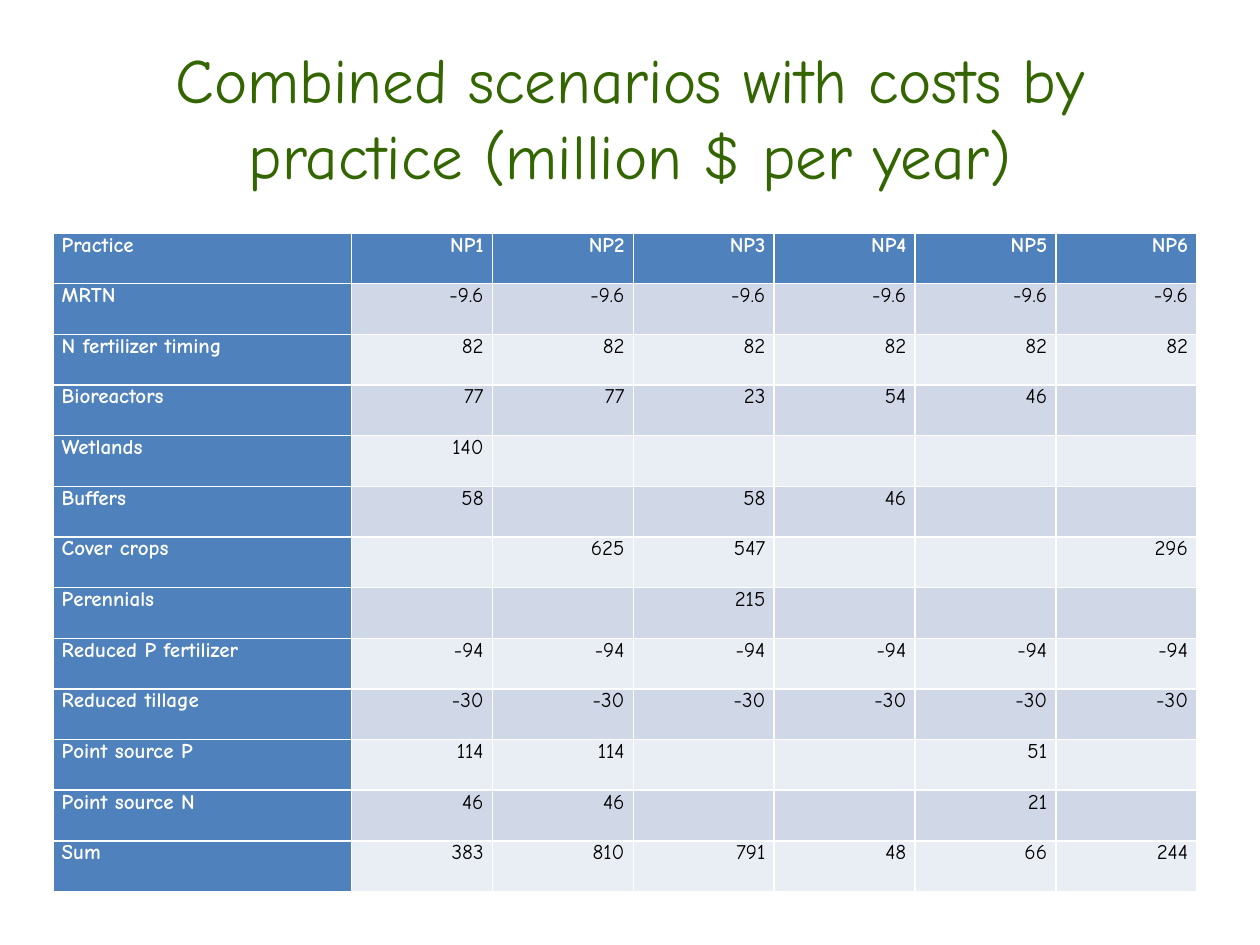
from pptx import Presentation
from pptx.dml.color import RGBColor
from pptx.enum.text import MSO_ANCHOR, PP_ALIGN as Align
from pptx.util import Inches, Pt

FONT = "Comic Neue"
GREEN = RGBColor(0x33, 0x66, 0x00)
BLUE = RGBColor(0x4F, 0x81, 0xBD)
DARK_BAND = RGBColor(0xD0, 0xD8, 0xE8)
LIGHT_BAND = RGBColor(0xE9, 0xED, 0xF4)
WHITE = RGBColor(0xFF, 0xFF, 0xFF)
BLACK = RGBColor(0x00, 0x00, 0x00)

TITLE = "Combined scenarios with costs by practice (million $ per year)"
COSTS = [
    ["Practice", "NP1", "NP2", "NP3", "NP4", "NP5", "NP6"],
    ["MRTN"] + ["-9.6"] * 6,
    ["N fertilizer timing"] + ["82"] * 6,
    ["Bioreactors", "77", "77", "23", "54", "46", ""],
    ["Wetlands", "140", "", "", "", "", ""],
    ["Buffers", "58", "", "58", "46", "", ""],
    ["Cover crops", "", "625", "547", "", "", "296"],
    ["Perennials", "", "", "215", "", "", ""],
    ["Reduced P fertilizer"] + ["-94"] * 6,
    ["Reduced tillage"] + ["-30"] * 6,
    ["Point source P", "114", "114", "", "", "51", ""],
    ["Point source N", "46", "46", "", "", "21", ""],
    ["Sum", "383", "810", "791", "48", "66", "244"],
]
TABLE_LEFT, TABLE_TOP = 0.42, 1.85
TABLE_WIDTH, TABLE_HEIGHT = 9.08, 5.23
PRACTICE_WIDTH = 2.37


def apply_format(target, values):
    for name, value in values.items():
        setattr(target, name, value)


def add_text(paragraph, text, size, color, bold=False):
    run = paragraph.add_run()
    run.text = text
    apply_format(run.font, {"name": FONT, "size": Pt(size), "bold": bold})
    run.font.color.rgb = color


def set_title(slide):
    title = slide.shapes.title
    apply_format(title, {"left": Inches(0.5), "top": Inches(0.3),
                         "width": Inches(9), "height": Inches(1.25)})
    title.text_frame.vertical_anchor = MSO_ANCHOR.MIDDLE
    paragraph = title.text_frame.paragraphs[0]
    paragraph.alignment = Align.CENTER
    add_text(paragraph, TITLE, 36, GREEN)


def paragraph_spacing(row):
    """Return the points before and after the text of a table row."""
    before = {0: 6, 1: 12}.get(row, 0)
    after = 0 if row in (0, len(COSTS) - 1) else 6
    return {"space_before": Pt(before), "space_after": Pt(after)}


def fill_cell(cell, text, row, column):
    heading = row == 0 or column == 0
    band = DARK_BAND if row % 2 else LIGHT_BAND
    cell.fill.solid()
    cell.fill.fore_color.rgb = BLUE if heading else band
    apply_format(cell, {"margin_left": Inches(0.07), "margin_right": Inches(0.07),
                        "margin_top": 0, "margin_bottom": 0})
    if text:
        paragraph = cell.text_frame.paragraphs[0]
        paragraph.alignment = Align.RIGHT if column else Align.LEFT
        apply_format(paragraph, paragraph_spacing(row))
        add_text(paragraph, text, 12, WHITE if heading else BLACK, heading)


def add_cost_table(slide):
    row_count, column_count = len(COSTS), len(COSTS[0])
    table = slide.shapes.add_table(
        row_count, column_count, Inches(TABLE_LEFT), Inches(TABLE_TOP),
        Inches(TABLE_WIDTH), Inches(TABLE_HEIGHT)).table
    table.first_col = True
    scenario_width = (TABLE_WIDTH - PRACTICE_WIDTH) / (column_count - 1)
    for index, column in enumerate(table.columns):
        column.width = Inches(scenario_width if index else PRACTICE_WIDTH)
    for row, texts in enumerate(COSTS):
        for column, text in enumerate(texts):
            fill_cell(table.cell(row, column), text, row, column)


def main():
    presentation = Presentation()
    presentation.slide_width = Inches(10)
    presentation.slide_height = Inches(7.5)
    slide = presentation.slides.add_slide(presentation.slide_layouts[5])
    set_title(slide)
    add_cost_table(slide)
    presentation.save("out.pptx")


if __name__ == "__main__":
    main()
